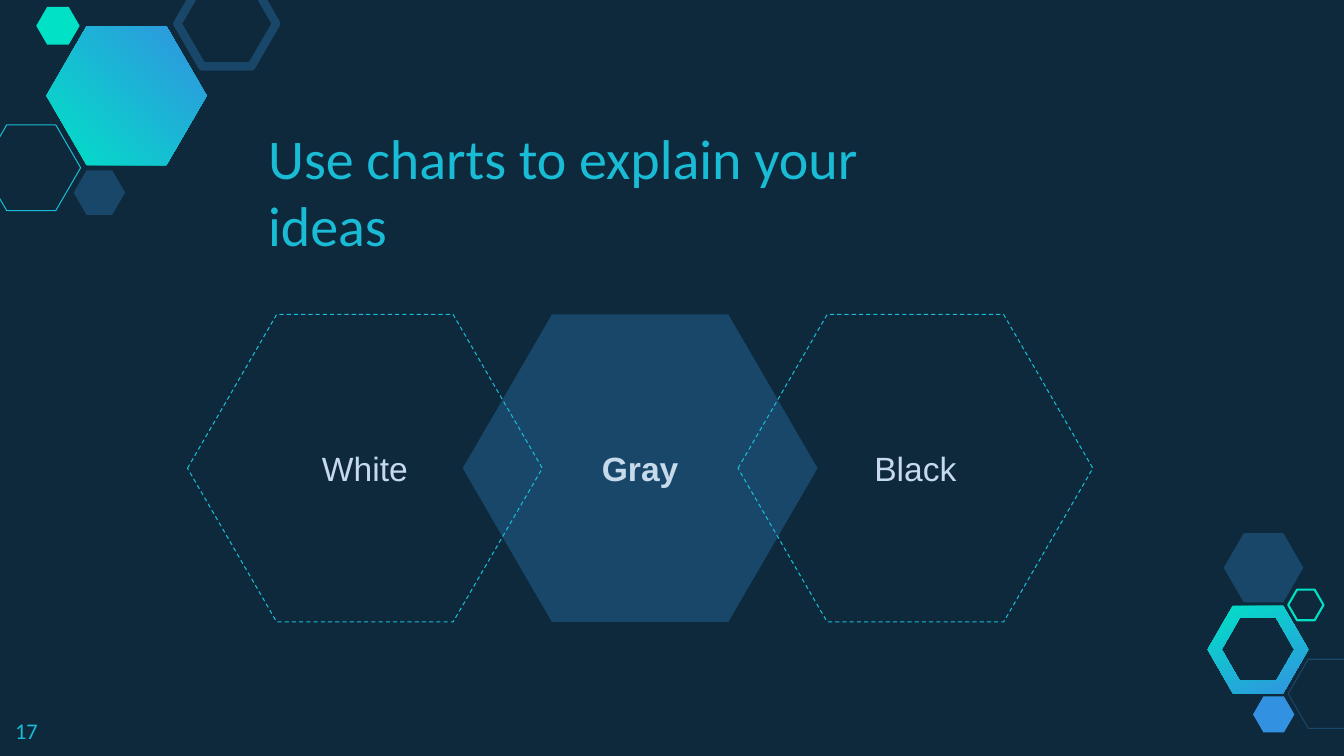
from pptx import Presentation
from pptx import util as u
from pptx.dml.color import RGBColor
from pptx.enum import dml, shapes, text

COLORS = {
    "night": "0E293C",
    "navy": "184769",
    "cyan": "19BBD5",
    "mint": "00E1C6",
    "blue": "3292E1",
    "pale": "C6DAEC",
}


class HexagonSlide:
    """Draw hexagons and text on one slide, with places given in percent of its size."""

    RATIO = 0.867
    INSET = u.Inches(0.13)

    def __init__(self, deck):
        self.width, self.height = deck.slide_width, deck.slide_height
        self.slide = deck.slides.add_slide(deck.slide_layouts[6])
        background = self.slide.background.fill
        background.solid()
        background.fore_color.rgb = self.color("night")

    def color(self, name):
        return RGBColor.from_string(COLORS[name])

    def x(self, share):
        return u.Emu(round(self.width * share / 100))

    def y(self, share):
        return u.Emu(round(self.height * share / 100))

    def paint(self, shape, fill=None, line=None, weight=0.75, dashed=False, angle=None):
        shape.shadow.inherit = False
        if angle is not None:
            shape.fill.gradient()
            shape.fill.gradient_angle = angle
            for stop, name in zip(shape.fill.gradient_stops, ("mint", "blue")):
                stop.color.rgb = self.color(name)
        elif fill:
            shape.fill.solid()
            shape.fill.fore_color.rgb = self.color(fill)
        else:
            shape.fill.background()
        if line:
            shape.line.color.rgb = self.color(line)
            shape.line.width = u.Pt(weight)
            if dashed:
                shape.line.dash_style = dml.MSO_LINE.DASH
        else:
            shape.line.fill.background()

    def hexagon(self, left, top, width, **style):
        span = self.x(width)
        hexagon = self.slide.shapes.add_shape(
            shapes.MSO_SHAPE.HEXAGON, self.x(left), self.y(top), span, round(span * self.RATIO))
        hexagon.adjustments[0] = 0.29
        self.paint(hexagon, **style)
        return hexagon

    def ring(self, left, top, width, hole, angle):
        span = self.x(width)
        middle_x = self.x(left) + span / 2
        middle_y = self.y(top) + span * self.RATIO / 2

        def corners(size):
            rise = size * self.RATIO
            steps = [(-2, 0), (-1, -1), (1, -1), (2, 0), (1, 1), (-1, 1)]
            return [(round(middle_x + size * across / 4), round(middle_y + rise * down / 2))
                    for across, down in steps]

        outer, inner = corners(span), corners(span * hole)[::-1]
        outline = self.slide.shapes.build_freeform(*outer[0])
        outline.add_line_segments(outer[1:])
        outline.move_to(*inner[0])
        outline.add_line_segments(inner[1:])
        self.paint(outline.convert_to_shape(), angle=angle)

    def add_words(self, shape, words, size, font, color, bold=False,
                  align=text.PP_ALIGN.LEFT, anchor=text.MSO_ANCHOR.TOP):
        frame = shape.text_frame
        frame.word_wrap = True
        frame.vertical_anchor = anchor
        frame.margin_left = frame.margin_right = self.INSET
        frame.margin_top = frame.margin_bottom = self.INSET
        paragraph = frame.paragraphs[0]
        paragraph.alignment = align
        run = paragraph.add_run()
        run.text = words
        run.font.size = u.Pt(size)
        run.font.name = font
        run.font.bold = bold
        run.font.color.rgb = self.color(color)

    def label(self, left, top, width, height, words, size, **style):
        box = self.slide.shapes.add_textbox(
            self.x(left), self.y(top), self.x(width), self.y(height))
        self.add_words(box, words, size, "Calibri", "cyan", **style)

    def idea(self, column, words, bold=False, **style):
        hexagon = self.hexagon(13.95 + 20.48 * column, 41.6, 26.4, **style)
        self.add_words(hexagon, words, 24, "Arial", "pale", bold,
                       text.PP_ALIGN.CENTER, text.MSO_ANCHOR.MIDDLE)


def main():
    deck = Presentation()
    deck.slide_width, deck.slide_height = u.Inches(13.33), u.Inches(7.5)
    page = HexagonSlide(deck)

    page.ring(89.85, 80.13, 7.5, hole=0.72, angle=296)
    decorations = [
        (3.45, 3.47, 11.93, {"angle": 45}),
        (-1.35, 16.53, 7.35, {"line": "cyan"}),
        (5.48, 22.53, 3.83, {"fill": "navy"}),
        (13.2, -2.53, 7.35, {"line": "navy", "weight": 6}),
        (2.7, 0.93, 3.23, {"fill": "mint"}),
        (95.85, 87.2, 5.93, {"line": "navy"}),
        (93.23, 92.13, 3.08, {"fill": "blue"}),
        (91.05, 70.53, 5.93, {"fill": "navy"}),
        (95.85, 78, 2.63, {"line": "mint", "weight": 1.5}),
    ]
    for left, top, width, style in decorations:
        page.hexagon(left, top, width, **style)

    page.idea(1, "Gray", bold=True, fill="navy")
    page.label(18.98, 23.33, 54.09, 12.53, "Use charts to explain your ideas", 40,
               anchor=text.MSO_ANCHOR.BOTTOM)
    for column, shade in ((0, "White"), (2, "Black")):
        page.idea(column, shade, line="cyan", dashed=True)
    page.label(0.15, 93.07, 6, 6.93, "17", 16)

    deck.save("out.pptx")


if __name__ == "__main__":
    main()
